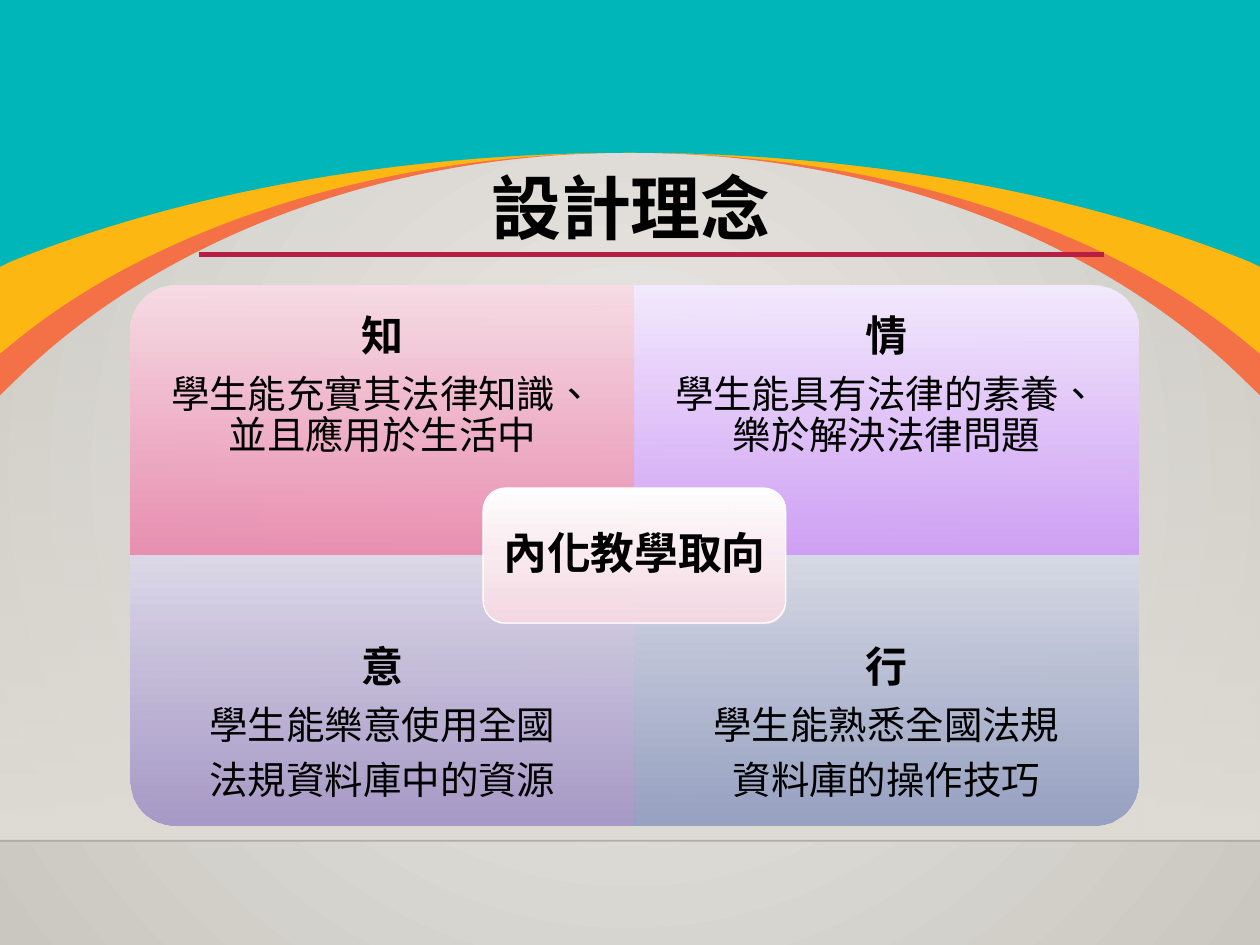
from dataclasses import dataclass

from lxml import etree
from pptx import Presentation
from pptx.dml.color import RGBColor
from pptx.enum import shapes, text
from pptx.oxml import ns
from pptx.util import Cm, Pt


@dataclass(frozen=True)
class Theme:
    font: str = "Noto Sans CJK TC"
    language: str = "zh-TW"
    ink: str = "000000"
    rule: str = "B71E42"
    white: str = "FFFFFF"
    floor: str = "DFDBD5"
    backdrop: tuple = ("ECEAE7", "CAC7C1")
    core: tuple = ("FFFFFF", "F7DAE3")
    title_size: int = 40
    core_size: int = 25
    heading_size: int = 24
    body_size: int = 22


THEME = Theme()
WIDTH, HEIGHT = 25.4, 19.05
PEAK = 3.08
GRID_LEFT, GRID_TOP = 2.63, 5.75
CELL_WIDTH, CELL_HEIGHT = 10.16, 5.45
TEXT_HEIGHT = 4.09

# colour, height at the slide's edge, then the curve's start and two controls
BANDS = [
    ("F47046", 7.97, [(0.33, 7.65), (3.15, 4.88), (7.65, PEAK)]),
    ("FCB712", 7.13, [(0.33, 6.86), (3.15, 4.57), (7.65, PEAK)]),
    ("00B6B9", 5.38, [(0.2, 5.28), (3.61, 3.91), (7.95, PEAK)]),
]

# column, row, rotation, gradient, heading, body lines
QUADRANTS = [
    (0, 0, 270, ("F7DCE5", "EA8AAE"), "知", ["學生能充實其法律知識、並且應用於生活中"]),
    (1, 0, 0, ("F4EAFD", "CE9CF7"), "情", ["學生能具有法律的素養、樂於解決法律問題"]),
    (0, 1, 180, ("DCD8E8", "A395C6"), "意", ["學生能樂意使用全國", "法規資料庫中的資源"]),
    (1, 1, 90, ("D6D9E5", "929DC0"), "行", ["學生能熟悉全國法規", "資料庫的操作技巧"]),
]


def rgb(value):
    return RGBColor.from_string(value)


def add_alpha(color_element, percent):
    etree.SubElement(color_element, ns.qn("a:alpha")).set("val", str(percent * 1000))


def fill_gradient(fill, owner, colors, alphas=(100, 100)):
    """Fill from top to bottom, whatever the rotation; return the gradient element."""
    fill.gradient()
    fill.gradient_angle = 270
    for stop, color, position in zip(fill.gradient_stops, colors, (0, 1)):
        stop.color.rgb = rgb(color)
        stop.position = position
    gradient = owner.find(".//" + ns.qn("a:gradFill"))
    gradient.set("rotWithShape", "0")
    for color_element, alpha in zip(gradient.iter(ns.qn("a:srgbClr")), alphas):
        if alpha < 100:
            add_alpha(color_element, alpha)
    return gradient


def paint_background(page):
    gradient = fill_gradient(page.background.fill, page.element, THEME.backdrop)
    gradient.remove(gradient.find(ns.qn("a:lin")))
    radial = etree.SubElement(gradient, ns.qn("a:path"))
    radial.set("path", "circle")
    center = etree.SubElement(radial, ns.qn("a:fillToRect"))
    for side in "ltrb":
        center.set(side, "50000")


def add_gradient_shape(page, kind, left, top, width, height, colors, alphas=(100, 92)):
    shape = page.shapes.add_shape(kind, Cm(left), Cm(top), Cm(width), Cm(height))
    shape.shadow.inherit = False
    shape.line.fill.background()
    fill_gradient(shape.fill, shape.element, colors, alphas)
    return shape


def add_rule(page, left, right, top, color, weight, alpha=100):
    line = page.shapes.add_connector(
        shapes.MSO_CONNECTOR.STRAIGHT, Cm(left), Cm(top), Cm(right), Cm(top))
    line.line.color.rgb = rgb(color)
    line.line.width = Pt(weight)
    properties = line.element.spPr
    if alpha < 100:
        add_alpha(properties.find(".//" + ns.qn("a:srgbClr")), alpha)
    etree.SubElement(properties, ns.qn("a:effectLst"))


def bend(segments):
    """Turn three straight segments into one cubic curve through their end points."""
    curve = etree.Element(ns.qn("a:cubicBezTo"))
    segments[0].addprevious(curve)
    for segment in segments:
        curve.append(segment.find(ns.qn("a:pt")))
        segment.getparent().remove(segment)


def add_band(page, color, edge, controls):
    """Fill the slide above an arch that is symmetric about its peak."""
    left_half = [(0, edge), *controls]
    right_half = [(WIDTH - x, y) for x, y in reversed(left_half)]
    points = [*left_half, (WIDTH / 2, PEAK), *right_half, (WIDTH, 0), (0, 0)]
    outline = [(Cm(x), Cm(y)) for x, y in points]
    builder = page.shapes.build_freeform(*outline[0])
    builder.add_line_segments(outline[1:], close=True)
    band = builder.convert_to_shape()
    segments = list(band.element.iter(ns.qn("a:lnTo")))
    bend(segments[1:4])
    bend(segments[4:7])
    band.shadow.inherit = False
    band.fill.solid()
    band.fill.fore_color.rgb = rgb(color)
    band.line.fill.background()


def write_paragraphs(frame, lines, align, anchor, inset):
    """Write (wording, size, bold) lines into a text frame."""
    frame.word_wrap = True
    frame.auto_size = text.MSO_AUTO_SIZE.NONE
    frame.vertical_anchor = anchor
    frame.margin_left = frame.margin_right = Cm(inset)
    frame.margin_top = frame.margin_bottom = Cm(inset)
    for index, (wording, size, bold) in enumerate(lines):
        para = frame.add_paragraph() if index else frame.paragraphs[0]
        para.text = wording
        para.alignment = align
        para.line_spacing = 0.9
        para.space_before = Pt(0)
        para.space_after = Pt(round(size * 0.35, 1))
        font = para.font
        font.size, font.bold, font.name = Pt(size), bold, THEME.font
        font.color.rgb = rgb(THEME.ink)
        defaults = para._p.find(".//" + ns.qn("a:defRPr"))
        defaults.set("lang", THEME.language)
        etree.SubElement(defaults, ns.qn("a:ea")).set("typeface", THEME.font)


def add_title(page, wording):
    title = page.shapes.title
    title.left, title.top, title.width, title.height = Cm(9.65), Cm(3.38), Cm(12.67), Cm(2.36)
    write_paragraphs(title.text_frame, [(wording, THEME.title_size, True)],
                     text.PP_ALIGN.LEFT, text.MSO_ANCHOR.TOP, 0.13)
    title.text_frame.margin_left = Cm(0.25)
    page.shapes.element.append(title.element)  # in front of the bands


def add_quadrant(page, column, row, rotation, colors, heading, body):
    left, top = GRID_LEFT + column * CELL_WIDTH, GRID_TOP + row * CELL_HEIGHT
    width, height = CELL_WIDTH, CELL_HEIGHT
    if rotation % 180:
        width, height = height, width
    panel = add_gradient_shape(
        page, shapes.MSO_SHAPE.ROUND_1_RECTANGLE,
        left + (CELL_WIDTH - width) / 2, top + (CELL_HEIGHT - height) / 2,
        width, height, colors)
    panel.rotation = rotation
    text_top = top + row * (CELL_HEIGHT - TEXT_HEIGHT)
    box = page.shapes.add_textbox(Cm(left), Cm(text_top), Cm(CELL_WIDTH), Cm(TEXT_HEIGHT))
    lines = [(heading, THEME.heading_size, True)]
    lines += [(line, THEME.body_size, False) for line in body]
    write_paragraphs(box.text_frame, lines, text.PP_ALIGN.CENTER, text.MSO_ANCHOR.MIDDLE, 0.49)


def add_core(page, wording):
    width, height = 6.1, 2.72
    core = add_gradient_shape(
        page, shapes.MSO_SHAPE.ROUNDED_RECTANGLE,
        GRID_LEFT + CELL_WIDTH - width / 2, GRID_TOP + CELL_HEIGHT - height / 2,
        width, height, THEME.core)
    core.line.color.rgb = rgb(THEME.white)
    core.line.width = Pt(0.75)
    write_paragraphs(core.text_frame, [(wording, THEME.core_size, True)],
                     text.PP_ALIGN.CENTER, text.MSO_ANCHOR.MIDDLE, 0.25)


def main():
    deck = Presentation()
    deck.slide_width, deck.slide_height = Cm(WIDTH), Cm(HEIGHT)
    page = deck.slides.add_slide(deck.slide_layouts[5])
    paint_background(page)
    add_gradient_shape(page, shapes.MSO_SHAPE.RECTANGLE, 0, 5.6, WIDTH, 11.34,
                       (THEME.floor, THEME.floor), (0, 100))
    add_rule(page, 0, WIDTH, 16.95, THEME.ink, 1, alpha=20)
    for band in BANDS:
        add_band(page, *band)
    add_rule(page, 4.01, 22.26, 5.13, THEME.rule, 2.5)
    add_title(page, "設計理念")
    for quadrant in QUADRANTS:
        add_quadrant(page, *quadrant)
    add_core(page, "內化教學取向")
    deck.save("out.pptx")


if __name__ == "__main__":
    main()
